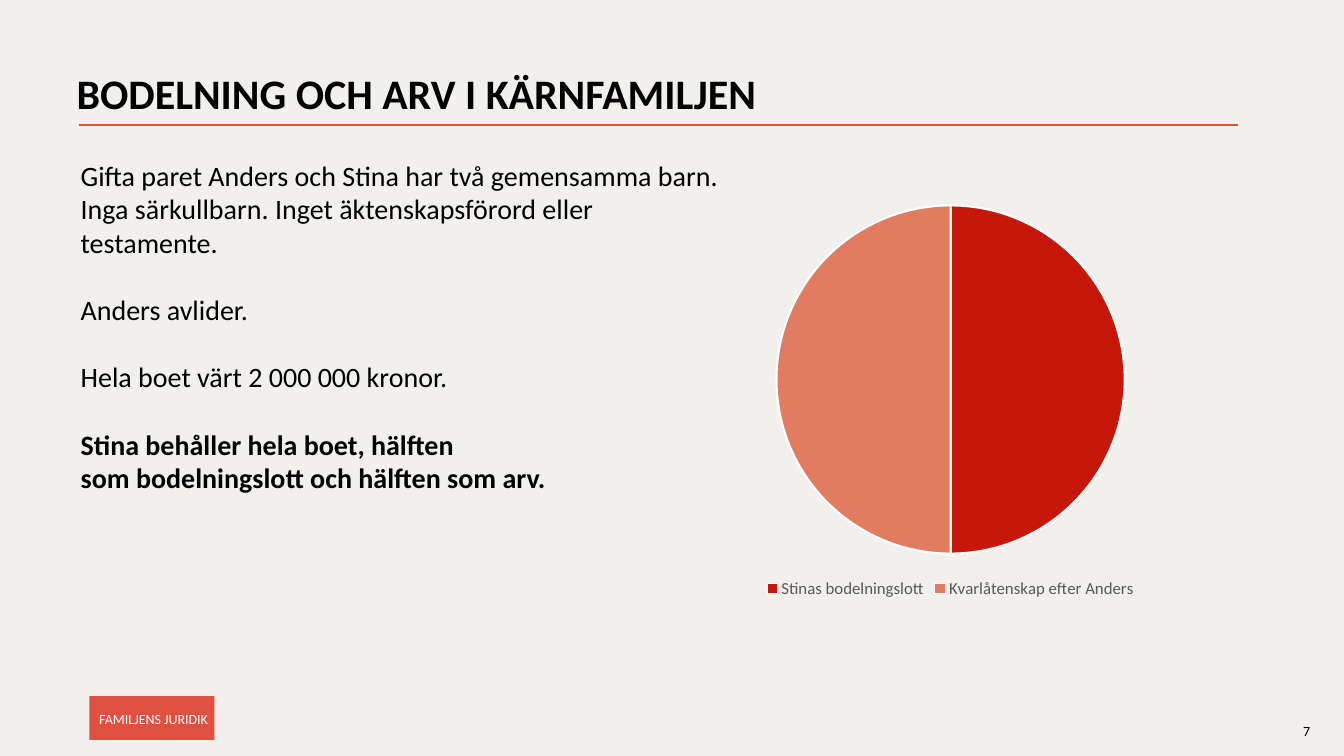
"""Builds a slide on property division and inheritance in the nuclear family."""
import dataclasses

import lxml.etree
import pptx
import pptx.chart.data
import pptx.dml.color
import pptx.enum.chart
import pptx.enum.shapes
import pptx.enum.text
import pptx.oxml.ns
import pptx.util

Pt = pptx.util.Pt
RGB = pptx.dml.color.RGBColor.from_string


@dataclasses.dataclass(frozen=True)
class Theme:
    face: str = "Calibri"
    backdrop: str = "F1F0EC"
    ink: str = "000000"
    white: str = "FFFFFF"
    accent: str = "E05040"
    muted: str = "595959"
    slices: tuple = ("C7170A", "E27C61")
    heading: int = 30
    story: int = 20
    legend: int = 12
    small: int = 10


theme = Theme()


def apply(target, values):
    for name, value in values.items():
        setattr(target, name, value)


def style_font(font, size, color, bold=False):
    apply(font, {"name": theme.face, "size": Pt(size), "bold": bold})
    font.color.rgb = RGB(color)


deck = pptx.Presentation()
apply(deck, {"slide_width": Pt(960), "slide_height": Pt(540)})
slide = deck.slides.add_slide(deck.slide_layouts[1])
slide.background.fill.solid()
slide.background.fill.fore_color.rgb = RGB(theme.backdrop)

frame_format = {
    "word_wrap": True,
    "auto_size": pptx.enum.text.MSO_AUTO_SIZE.NONE,
    "vertical_anchor": pptx.enum.text.MSO_ANCHOR.TOP,
}
left_aligned = pptx.enum.text.PP_ALIGN.LEFT

rule = slide.shapes.add_connector(
    pptx.enum.shapes.MSO_CONNECTOR.STRAIGHT, Pt(56.2), Pt(89.3), Pt(884), Pt(89.3)
)
rule.line.color.rgb = RGB(theme.accent)
rule.line.width = Pt(1.5)
lxml.etree.SubElement(rule._element.spPr, pptx.oxml.ns.qn("a:effectLst"))

heading = slide.shapes.title
apply(heading, {"left": Pt(47.5), "top": Pt(49), "width": Pt(828), "height": Pt(104.4)})
apply(heading.text_frame, frame_format)
heading.text_frame.text = "BODELNING OCH ARV I KÄRNFAMILJEN"
heading_line = heading.text_frame.paragraphs[0]
apply(heading_line, {"alignment": left_aligned, "line_spacing": 0.9})
style_font(heading_line.font, theme.heading, theme.ink, True)

story = slide.placeholders[1]
apply(story, {"left": Pt(50.4), "top": Pt(109.4), "width": Pt(480), "height": Pt(250)})
apply(story.text_frame, frame_format)
statements = [
    "Gifta paret Anders och Stina har två gemensamma barn.\v"
    "Inga särkullbarn. Inget äktenskapsförord eller testamente.",
    "Anders avlider.",
    "Hela boet värt 2 000 000 kronor.",
    "Stina behåller hela boet, hälften\vsom bodelningslott och hälften som arv.",
]
story.text_frame.text = "\n".join(statements)
for index, statement in enumerate(story.text_frame.paragraphs):
    properties = statement._p.get_or_add_pPr()
    properties.set("marL", "0")
    properties.set("indent", "0")
    lxml.etree.SubElement(properties, pptx.oxml.ns.qn("a:buNone"))
    apply(statement, {"alignment": left_aligned, "space_before": Pt(24 if index else 0)})
    conclusion = index == len(statements) - 1
    style_font(statement.font, theme.story, theme.ink, conclusion)

shares = pptx.chart.data.CategoryChartData()
shares.categories = ["Stinas bodelningslott", "Kvarlåtenskap efter Anders"]
shares.add_series("Series 1", (50, 50))
estate = slide.shapes.add_chart(
    pptx.enum.chart.XL_CHART_TYPE.PIE, Pt(489), Pt(136.8), Pt(380), Pt(293.8), shares
).chart
apply(estate, {"has_title": False, "has_legend": True})
style_font(estate.font, theme.small, theme.ink)
apply(estate.legend, {
    "position": pptx.enum.chart.XL_LEGEND_POSITION.BOTTOM,
    "include_in_layout": False,
})
style_font(estate.legend.font, theme.legend, theme.muted)
estate.plots[0].vary_by_categories = True
for index, color in enumerate(theme.slices):
    share = estate.plots[0].series[0].points[index].format
    share.fill.solid()
    share.fill.fore_color.rgb = RGB(color)
    share.line.color.rgb = RGB(theme.white)
    share.line.width = Pt(1.5)

topic = slide.shapes.add_shape(
    pptx.enum.shapes.MSO_SHAPE.RECTANGLE, Pt(63.8), Pt(497.3), Pt(89.3), Pt(31.2)
)
topic.shadow.inherit = False
topic.fill.solid()
topic.fill.fore_color.rgb = RGB(theme.accent)
topic.line.fill.background()
apply(topic.text_frame, {
    "word_wrap": False,
    "vertical_anchor": pptx.enum.text.MSO_ANCHOR.MIDDLE,
    "margin_left": Pt(7.2),
    "margin_top": Pt(5.8),
    "margin_right": Pt(2.9),
    "margin_bottom": Pt(3.6),
})
topic.text_frame.text = "FAMILJENS JURIDIK"
topic_line = topic.text_frame.paragraphs[0]
apply(topic_line, {"alignment": left_aligned, "line_spacing": 0.9})
style_font(topic_line.font, theme.small, theme.white)

page_number = slide.shapes.add_textbox(Pt(923.8), Pt(512.6), Pt(28.8), Pt(19.4))
apply(page_number.text_frame, frame_format)
page_number.text_frame.text = "7"
style_font(page_number.text_frame.paragraphs[0].font, theme.small, theme.ink)

deck.save("out.pptx")
